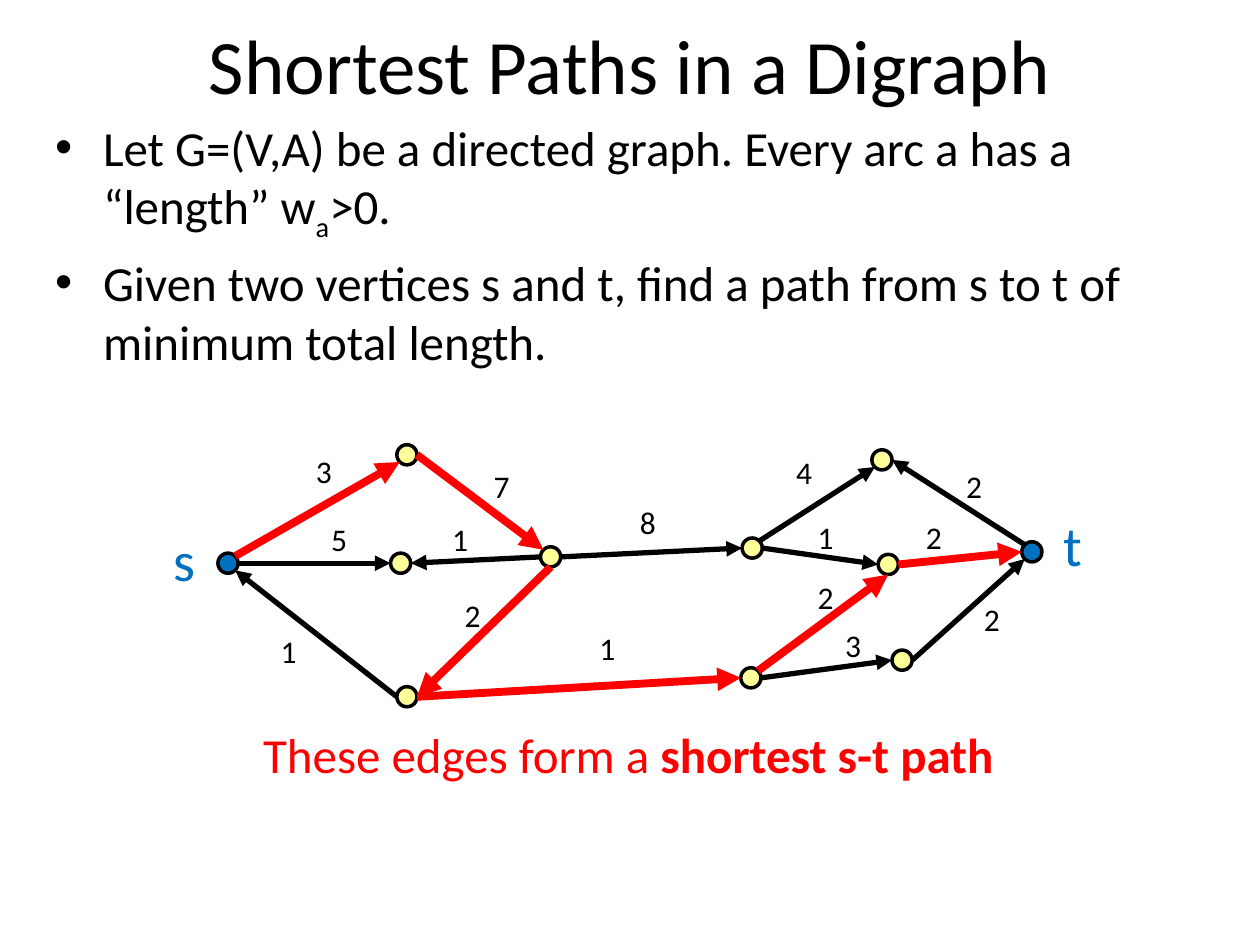
from math import cos, radians, sin

from lxml import etree
from pptx import Presentation
from pptx import util as u
from pptx.dml.color import RGBColor
from pptx.enum import shapes, text
from pptx.oxml.ns import qn

W, H = 10, 7.5
FONT = "Calibri"
COLORS = {"ink": "000000", "path": "FF0000", "end": "0070C0", "node": "FFFF99"}

# Wording: runs are (text, style)
TITLE = [("Shortest Paths in a Digraph", "")]
BULLETS = [
    [("Let G=(V,A) be a directed graph. Every arc a has a “length” w", ""),
     ("a", "sub"), (">0.", "")],
    [("Given two vertices s and t, find a path from s to t of "
      "minimum total length.", "")],
]
CAPTION = [("These edges form a ", ""), ("shortest s-t path", "bold")]

# Graph: vertex centres in inches
NODES = {
    "a": (3.23, 3.61), "b": (3.18, 4.47), "c": (3.23, 5.53),
    "d": (4.37, 4.42), "e": (5.96, 5.38), "f": (5.97, 4.35),
    "g": (7.00, 3.65), "h": (7.05, 4.48), "i": (7.16, 5.24),
    "t": (8.19, 4.38), "s": (1.81, 4.47),
}
# Arcs: tail vertex and side, head vertex and side, length, label corner, colour
ARCS = [
    ("s", "NE", "a", "SW", 3, (2.41, 3.54), "path"),
    ("a", "E", "d", "NW", 7, (3.82, 3.66), "path"),
    ("s", "E", "b", "W", 5, (2.53, 4.08), "ink"),
    ("d", "W", "b", "E", 1, (3.49, 4.08), "ink"),
    ("c", "W", "s", "SE", 1, (2.13, 4.97), "ink"),
    ("d", "S", "c", "E", 2, (3.59, 4.68), "path"),
    ("d", "E", "f", "W", 8, (4.98, 3.94), "ink"),
    ("c", "E", "e", "W", 1, (4.66, 4.94), "path"),
    ("f", "NE", "g", "SW", 4, (6.22, 3.55), "ink"),
    ("f", "E", "h", "W", 1, (6.39, 4.06), "ink"),
    ("e", "E", "i", "W", 3, (6.61, 4.92), "ink"),
    ("e", "NE", "h", "S", 2, (6.39, 4.54), "path"),
    ("t", "NW", "g", "E", 2, (7.57, 3.66), "ink"),
    ("h", "E", "t", "W", 2, (7.25, 4.06), "path"),
    ("i", "E", "t", "SW", 2, (7.71, 4.71), "ink"),
]
END_LABELS = [("s", (1.28, 4.12, 0.38, 0.64)), ("t", (8.34, 4, 0.35, 0.64))]
RADIUS = 0.08
SIDES = ["E", "SE", "S", "SW", "W", "NW", "N", "NE"]
WIDTHS = {"ink": 3, "path": 4.5}


def color(name):
    return RGBColor.from_string(COLORS[name])


def add_text(s, box, paragraphs, size, name="ink", wrap=False):
    tf = s.shapes.add_textbox(*map(u.Inches, box)).text_frame
    tf.word_wrap = wrap
    for n, runs in enumerate(paragraphs):
        p = tf.paragraphs[0] if n == 0 else tf.add_paragraph()
        for words, style in runs:
            r = p.add_run()
            r.text = words
            r.font.name, r.font.size = FONT, u.Pt(size)
            r.font.color.rgb = color(name)
            if style == "bold":
                r.font.bold = True
            elif style == "sub":
                r.font._element.set("baseline", "-25000")
    return tf


def add_bullet(p, indent):
    p.space_before = u.Pt(5.6)
    pPr = p._p.get_or_add_pPr()
    pPr.set("marL", str(u.Inches(indent)))
    pPr.set("indent", str(-u.Inches(indent)))
    etree.SubElement(pPr, qn("a:buFont"), typeface="Arial")
    etree.SubElement(pPr, qn("a:buChar"), char="•")


def rim(node, side):
    x, y = NODES[node]
    angle = radians(45 * SIDES.index(side))
    return u.Inches(x + RADIUS * cos(angle)), u.Inches(y + RADIUS * sin(angle))


def add_arc(s, start, end, name):
    line = s.shapes.add_connector(shapes.MSO_CONNECTOR.STRAIGHT, *start, *end)
    line.line.color.rgb = color(name)
    line.line.width = u.Pt(WIDTHS[name])
    etree.SubElement(line.line._get_or_add_ln(), qn("a:tailEnd"), type="triangle")
    etree.SubElement(line._element.spPr, qn("a:effectLst"))


def add_node(s, node):
    x, y = NODES[node]
    sp = s.shapes.add_shape(
        shapes.MSO_SHAPE.OVAL,
        *map(u.Inches, (x - RADIUS, y - RADIUS, 2 * RADIUS, 2 * RADIUS)))
    sp.shadow.inherit = False
    sp.fill.solid()
    sp.fill.fore_color.rgb = color("end" if node in "st" else "node")
    sp.line.color.rgb = color("ink")
    sp.line.width = u.Pt(2)


def main():
    prs = Presentation()
    prs.slide_width, prs.slide_height = u.Inches(W), u.Inches(H)
    s = prs.slides.add_slide(prs.slide_layouts[6])

    # Title and bullets
    tf = add_text(s, (0.05 * W, 0, 0.9 * W, 1.01), [TITLE], 44, wrap=True)
    tf.vertical_anchor = text.MSO_ANCHOR.MIDDLE
    tf.paragraphs[0].alignment = text.PP_ALIGN.CENTER
    tf = add_text(s, (0.34, 0.88, 0.93 * W, 5.65), BULLETS, 28, wrap=True)
    for p in tf.paragraphs:
        add_bullet(p, 0.38)

    # Graph
    for node in NODES:
        add_node(s, node)
    for tail, side, head, head_side, _, _, name in ARCS:
        add_arc(s, rim(tail, side), rim(head, head_side), name)
    for *_, length, corner, _ in ARCS:
        add_text(s, (*corner, 0.33, 0.4), [[(str(length), "")]], 18)
    for label, box in END_LABELS:
        add_text(s, box, [[(label, "")]], 32, "end")

    # Caption
    add_text(s, (1.99, 5.7, 6.01, 0.57), [CAPTION], 28, "path")
    prs.save("out.pptx")


if __name__ == "__main__":
    main()
